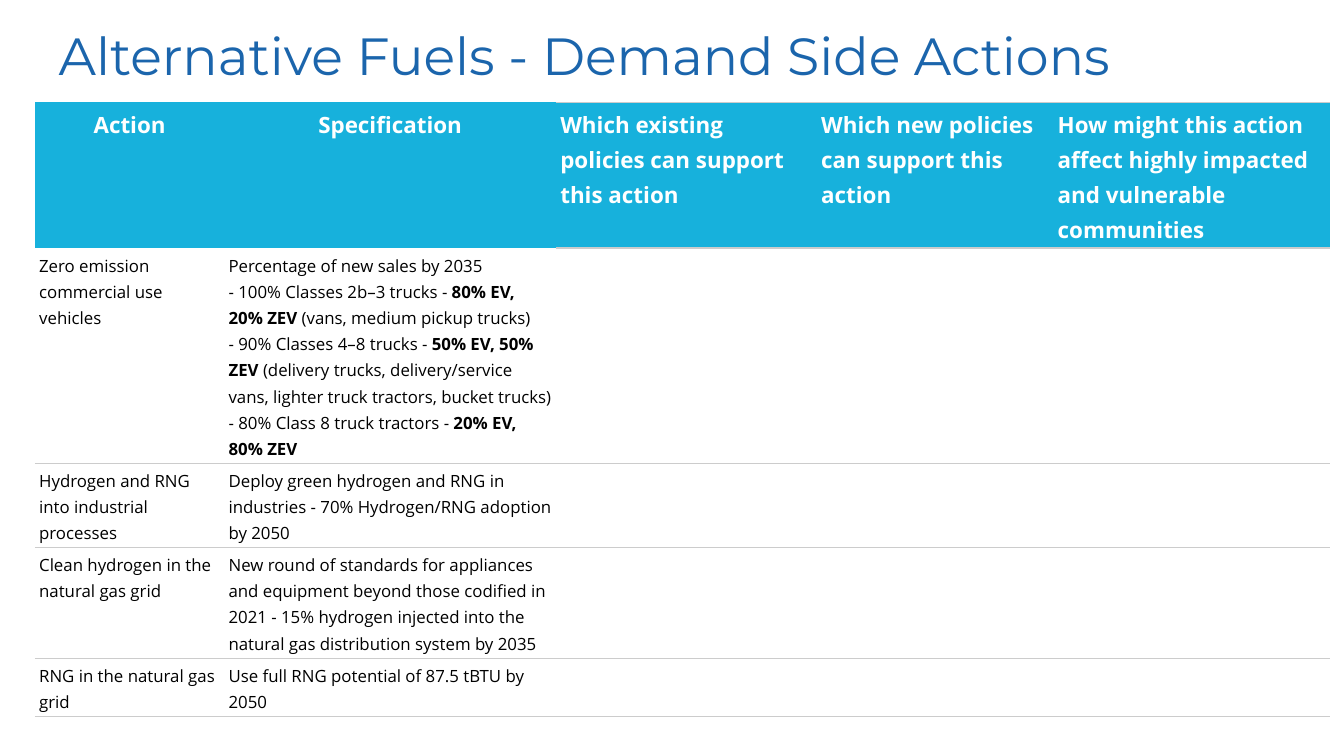
import pptx
import pptx.util
import pptx.dml.color
import pptx.enum.text
import pptx.oxml
import pptx.oxml.ns

Cm, Pt = pptx.util.Cm, pptx.util.Pt
ALIGN = pptx.enum.text.PP_ALIGN
ANCHOR = pptx.enum.text.MSO_ANCHOR

# Content: a cell is a list of paragraphs, a paragraph a list of runs;
# every second run is bold
TITLE = "Alternative Fuels - Demand Side Actions"
HEADERS = [
    "Action",
    "Specification",
    "Which existing policies can support this action",
    "Which new policies can support this action",
    "How might this action affect highly impacted and vulnerable communities",
]
ACTIONS = [
    ("Zero emission commercial use vehicles", [
        ["Percentage of new sales by 2035"],
        ["- 100% Classes 2b–3 trucks - ", "80% EV, 20% ZEV",
         " (vans, medium pickup trucks)"],
        ["- 90% Classes 4–8 trucks - ", "50% EV, 50% ZEV ",
         "(delivery trucks, delivery/service vans, lighter truck tractors, "
         "bucket trucks)"],
        ["- 80% Class 8 truck tractors - ", "20% EV, 80% ZEV"],
    ]),
    ("Hydrogen and RNG into industrial processes", [
        ["Deploy green hydrogen and RNG in industries - 70% Hydrogen/RNG "
         "adoption by 2050"]]),
    ("Clean hydrogen in the natural gas grid", [
        ["New round of standards for appliances and equipment beyond those "
         "codified in 2021 - 15% hydrogen injected into the natural gas "
         "distribution system by 2035"]]),
    ("RNG in the natural gas grid", [
        ["Use full RNG potential of 87.5 tBTU by 2050"]]),
]

# Layout and formats
COLUMN_WIDTHS = [3.58, 6.27, 4.93, 4.47, 5.23]
ROW_HEIGHTS = [2.76, 4.06, 1.58, 2.1, 1.09]
BLUE, GREY = "17B1DC", "CCCCCC"
TITLE_FONT = {"name": "Montserrat", "size": Pt(28), "bold": False}
HEADER_FONT = {"name": "Open Sans", "size": Pt(12)}
BODY_FONT = {"name": "Open Sans", "size": Pt(9)}
CELL_FORMAT = {
    "margin_left": Cm(0.08), "margin_right": Cm(0.08),
    "margin_top": Cm(0.05), "margin_bottom": Cm(0.05),
    "vertical_anchor": ANCHOR.TOP,
}


def set_format(target, values):
    for name, value in values.items():
        setattr(target, name, value)


def set_color(color_format, color):
    color_format.rgb = pptx.dml.color.RGBColor.from_string(color)


def set_font(font, values, color):
    set_format(font, values)
    set_color(font.color, color)


def set_borders(cell, lined_sides):
    """Draw grey lines on the given sides and clear the others."""
    properties = cell._tc.get_or_add_tcPr()
    for position, side in enumerate("LRTB"):
        if side in lined_sides:
            fill = f'<a:solidFill><a:srgbClr val="{GREY}"/></a:solidFill>'
        else:
            fill = "<a:noFill/>"
        properties.insert(position, pptx.oxml.parse_xml(
            f'<a:ln{side} {pptx.oxml.ns.nsdecls("a")} w="{Pt(0.75)}">'
            f"{fill}</a:ln{side}>"))


def write_cell(cell, paragraphs, font, color, bold=False, align=ALIGN.LEFT):
    for index, runs in enumerate(paragraphs):
        frame = cell.text_frame
        paragraph = frame.add_paragraph() if index else frame.paragraphs[0]
        set_format(paragraph, {"alignment": align, "line_spacing": 1.15})
        for run_index, text in enumerate(runs):
            run = paragraph.add_run()
            run.text = text
            set_font(run.font, font, color)
            run.font.bold = bold or run_index % 2 == 1


presentation = pptx.Presentation()
set_format(presentation, {"slide_width": Cm(25.4), "slide_height": Cm(14.29)})
slide = presentation.slides.add_slide(presentation.slide_layouts[5])

# Title
title = slide.shapes.title
set_format(title, {"left": Cm(0.86), "top": Cm(0.23),
                   "width": Cm(23.22), "height": Cm(1.6)})
title.text = TITLE
set_format(title.text_frame, {
    "word_wrap": True, "vertical_anchor": ANCHOR.MIDDLE,
    "auto_size": pptx.enum.text.MSO_AUTO_SIZE.NONE,
    "margin_left": Cm(0.25), "margin_right": Cm(0.25),
    "margin_top": Cm(0.25), "margin_bottom": Cm(0.25)})
title_paragraph = title.text_frame.paragraphs[0]
title_paragraph.alignment = ALIGN.LEFT
set_font(title_paragraph.runs[0].font, TITLE_FONT, "1B65AC")

# Table grid
table = slide.shapes.add_table(
    len(ROW_HEIGHTS), len(COLUMN_WIDTHS), Cm(0.66), Cm(1.93),
    Cm(sum(COLUMN_WIDTHS)), Cm(sum(ROW_HEIGHTS))).table
set_format(table, {"first_row": False, "horz_banding": False})
for column, width in zip(table.columns, COLUMN_WIDTHS):
    column.width = Cm(width)
for row, height in zip(table.rows, ROW_HEIGHTS):
    row.height = Cm(height)
for cell in table.iter_cells():
    set_format(cell, CELL_FORMAT)
    cell.fill.background()

# Header row: the first two columns are centred and have no lines
for index, header in enumerate(HEADERS):
    cell = table.cell(0, index)
    centred = index < 2
    cell.fill.solid()
    set_color(cell.fill.fore_color, BLUE)
    set_borders(cell, "" if centred else "TB")
    write_cell(cell, [[header]], HEADER_FONT, "FFFFFF", bold=True,
               align=ALIGN.CENTER if centred else ALIGN.LEFT)

# Action rows: the policy columns stay empty
for row_index, (action, specification) in enumerate(ACTIONS, start=1):
    for column_index in range(len(HEADERS)):
        first_lined = row_index > 1 or column_index > 1
        set_borders(table.cell(row_index, column_index),
                    "TB" if first_lined else "B")
    write_cell(table.cell(row_index, 0), [[action]], BODY_FONT, "000000")
    write_cell(table.cell(row_index, 1), specification, BODY_FONT, "000000")

presentation.save("out.pptx")
